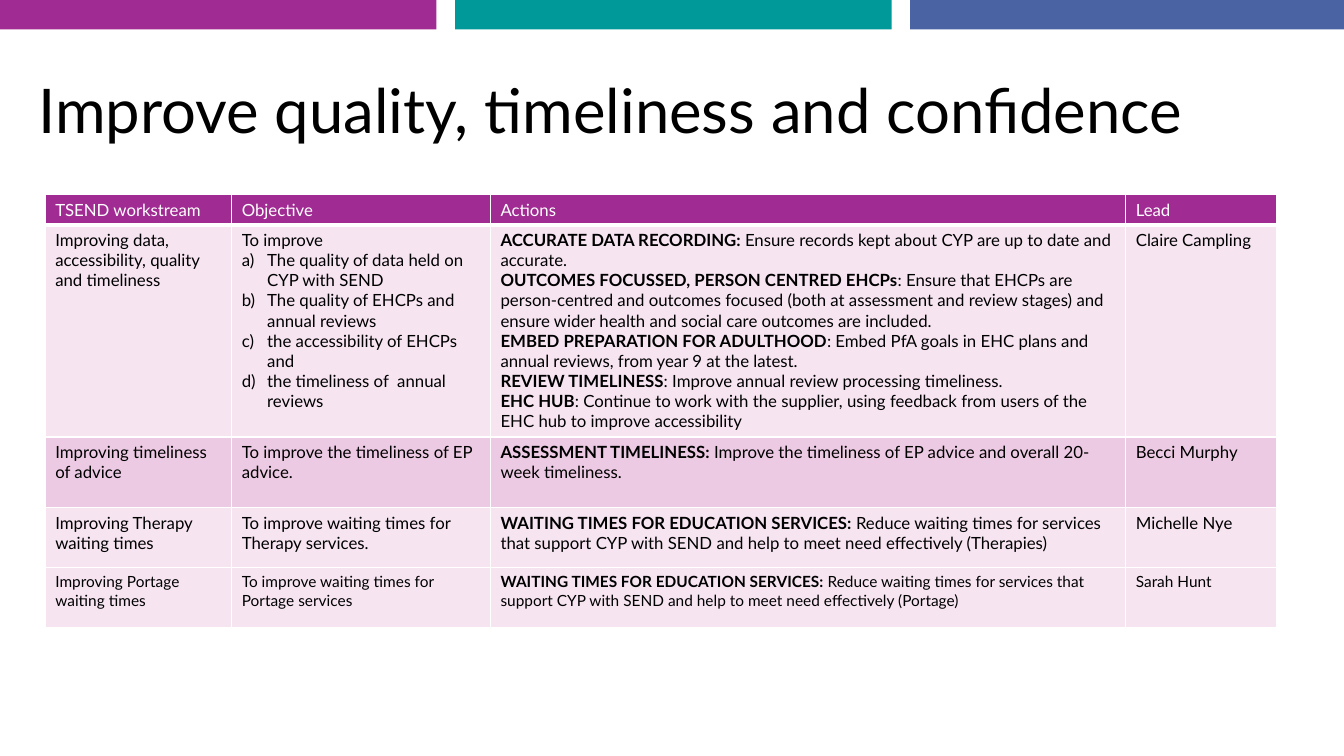
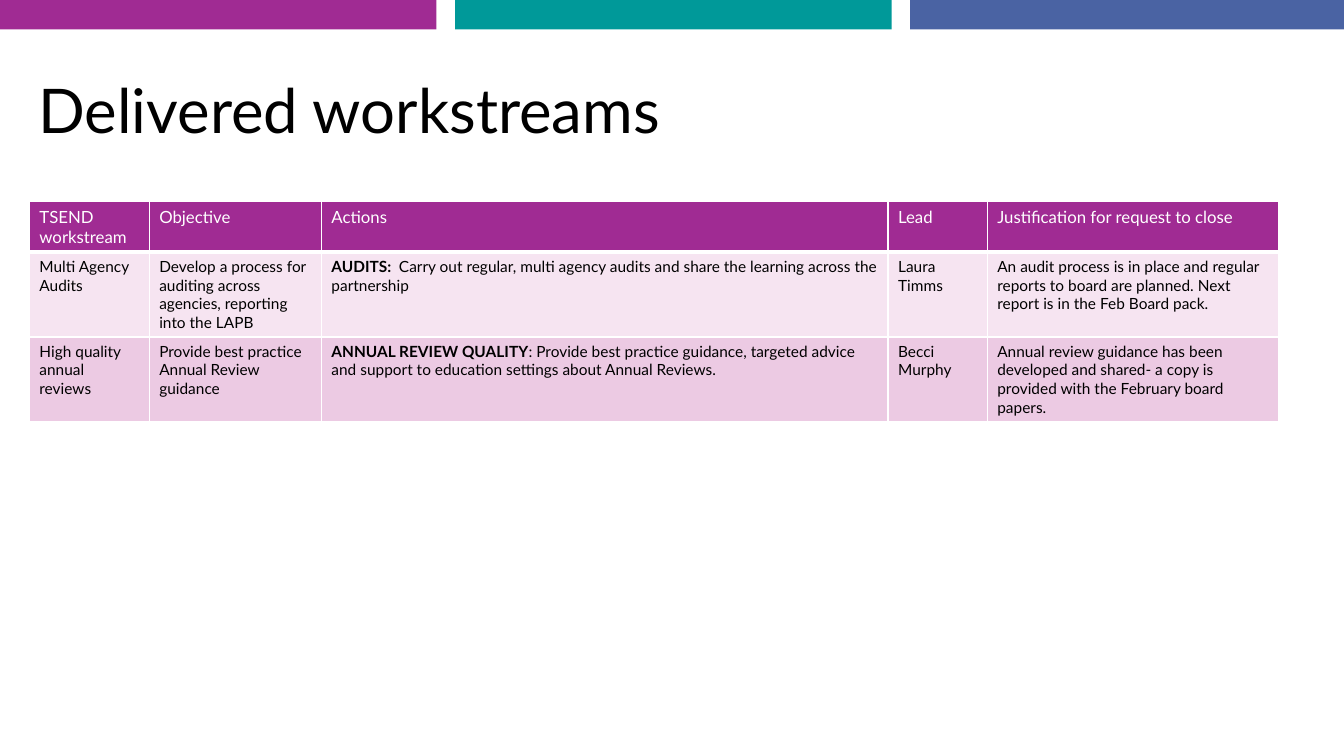
from dataclasses import dataclass

from lxml.etree import SubElement
from pptx import Presentation
from pptx.dml.color import RGBColor
from pptx.enum.shapes import MSO_SHAPE
from pptx.enum.text import MSO_ANCHOR, MSO_AUTO_SIZE, PP_ALIGN
from pptx.oxml.ns import qn
from pptx.util import Cm, Pt


@dataclass(frozen=True)
class Theme:
    font: str = "Lato"
    purple: str = "A02B93"
    teal: str = "009999"
    blue: str = "4A63A3"
    pale: str = "F6E4F1"
    tint: str = "ECCAE3"
    ink: str = "000000"
    white: str = "FFFFFF"
    title_size: int = 44
    table_size: int = 12
    small_size: int = 11
    border: int = 1
    header_border: int = 3


@dataclass(frozen=True)
class Line:
    """One paragraph: an optional bold lead, then plain text."""
    text: str
    lead: str = ""
    lettered: bool = False


THEME = Theme()
SLIDE_SIZE = (33.87, 19.05)
TITLE_BOX = (0.71, 1.02, 32.44, 3.68)
BAND_WIDTH, BAND_HEIGHT, BAND_STEP = 11, 0.74, 11.47
BAND_COLOURS = (THEME.purple, THEME.teal, THEME.blue)
LIST_INDENT = 0.64

SLIDES = [
    {
        "title": "Improve quality, timeliness and confidence",
        "corner": (1.14, 4.9),
        "columns": (4.7, 6.52, 16.01, 3.81),
        "heights": (0.74, 5.35, 1.78, 1.51, 1.51),
        "sizes": (THEME.table_size,) * 4 + (THEME.small_size,),
        "rows": [
            ["TSEND workstream", "Objective", "Actions", "Lead"],
            [
                "Improving data, accessibility, quality and timeliness",
                [
                    Line("To improve"),
                    Line("The quality of data held on CYP with SEND", lettered=True),
                    Line("The quality of EHCPs and annual reviews", lettered=True),
                    Line("the accessibility of EHCPs and", lettered=True),
                    Line("the timeliness of  annual reviews", lettered=True),
                ],
                [
                    Line("Ensure records kept about CYP are up to date and accurate.",
                         "ACCURATE DATA RECORDING: "),
                    Line(": Ensure that EHCPs are person-centred and outcomes focused "
                         "(both at assessment and review stages) and ensure wider health "
                         "and social care outcomes are included.",
                         "OUTCOMES FOCUSSED, PERSON CENTRED EHCPs"),
                    Line(": Embed PfA goals in EHC plans and annual reviews, "
                         "from year 9 at the latest.",
                         "EMBED PREPARATION FOR ADULTHOOD"),
                    Line(": Improve annual review processing timeliness.",
                         "REVIEW TIMELINESS"),
                    Line(": Continue to work with the supplier, using feedback from "
                         "users of the EHC hub to improve accessibility",
                         "EHC HUB"),
                ],
                "Claire Campling",
            ],
            [
                "Improving timeliness of advice",
                "To improve the timeliness of EP advice.",
                [Line("Improve the timeliness of EP advice and overall 20- week timeliness.",
                      "ASSESSMENT TIMELINESS: ")],
                "Becci Murphy",
            ],
            [
                "Improving Therapy waiting times",
                "To improve waiting times for Therapy services.",
                [Line("Reduce waiting times for services that support CYP with SEND "
                      "and help to meet need effectively (Therapies)",
                      "WAITING TIMES FOR EDUCATION SERVICES: ")],
                "Michelle Nye",
            ],
            [
                "Improving Portage waiting times",
                "To improve waiting times for Portage services",
                [Line("Reduce waiting times for services that support CYP with SEND "
                      "and help to meet need effectively (Portage)",
                      "WAITING TIMES FOR EDUCATION SERVICES: ")],
                "Sarah Hunt",
            ],
        ],
        "fills": (THEME.purple, THEME.pale, THEME.tint, THEME.pale, THEME.pale),
    },
    {
        "title": "Delivered workstreams",
        "corner": (0.74, 5.08),
        "columns": (3.02, 4.34, 14.28, 2.5, 7.33),
        "heights": (1.23, 2.14, 2.14),
        "sizes": (THEME.table_size, THEME.small_size, THEME.small_size),
        "rows": [
            ["TSEND workstream", "Objective", "Actions", "Lead",
             "Justification for request to close"],
            [
                "Multi Agency Audits",
                "Develop a process for auditing across agencies, reporting into the LAPB",
                [Line("Carry out regular, multi agency audits and share the learning "
                      "across the partnership", "AUDITS:  ")],
                "Laura Timms",
                "An audit process is in place and regular reports to board are planned. "
                "Next report is in the Feb Board pack.",
            ],
            [
                "High quality annual reviews",
                "Provide best practice Annual Review guidance",
                [Line(": Provide best practice guidance, targeted advice and support to "
                      "education settings about Annual Reviews.",
                      "ANNUAL REVIEW QUALITY")],
                "Becci Murphy",
                "Annual review guidance has been developed and shared- a copy is "
                "provided with the February board papers.",
            ],
        ],
        "fills": (THEME.purple, THEME.pale, THEME.tint),
    },
]


def add_letter(paragraph):
    """Number the paragraph a), b), c) with a hanging indent."""
    properties = paragraph._p.get_or_add_pPr()
    properties.set("marL", str(Cm(LIST_INDENT)))
    properties.set("indent", str(-Cm(LIST_INDENT)))
    SubElement(properties, qn("a:buAutoNum"), type="alphaLcParenR")


def write_text(frame, content, size, colour=THEME.ink, spacing=None):
    """Fill a text frame from a string or a list of Lines."""
    lines = [Line(content)] if isinstance(content, str) else content
    for index, line in enumerate(lines):
        paragraph = frame.add_paragraph() if index else frame.paragraphs[0]
        paragraph.alignment = PP_ALIGN.LEFT
        if spacing:
            paragraph.line_spacing = spacing
        if line.lettered:
            add_letter(paragraph)
        for text, bold in ((line.lead, True), (line.text, False)):
            if text:
                run = paragraph.add_run()
                run.text = text
                run.font.name = THEME.font
                run.font.size = Pt(size)
                run.font.bold = bold
                run.font.color.rgb = RGBColor.from_string(colour)


def set_borders(cell, bottom):
    properties = cell._tc.get_or_add_tcPr()
    widths = {"L": THEME.border, "R": THEME.border, "T": THEME.border, "B": bottom}
    for side, width in widths.items():
        border = SubElement(properties, qn(f"a:ln{side}"), w=str(Pt(width)))
        fill = SubElement(border, qn("a:solidFill"))
        SubElement(fill, qn("a:srgbClr"), val=THEME.white)


def fill_solid(item, colour):
    item.fill.solid()
    item.fill.fore_color.rgb = RGBColor.from_string(colour)


def add_workstream_table(slide, content):
    rows, columns, heights = content["rows"], content["columns"], content["heights"]
    left, top = content["corner"]
    table = slide.shapes.add_table(
        len(rows), len(columns), Cm(left), Cm(top), Cm(sum(columns)), Cm(sum(heights))
    ).table
    table.horz_banding = False
    for column, width in zip(table.columns, columns):
        column.width = Cm(width)
    for index, row in enumerate(table.rows):
        row.height = Cm(heights[index])
        is_header = index == 0
        for cell, text in zip(row.cells, rows[index]):
            set_borders(cell, THEME.header_border if is_header else THEME.border)
            fill_solid(cell, content["fills"][index])
            write_text(cell.text_frame, text, content["sizes"][index],
                       colour=THEME.white if is_header else THEME.ink)


def add_master_bands(master, slide):
    """Draw the top bands on a slide, then move them behind the master's placeholders."""
    for index, colour in enumerate(BAND_COLOURS):
        left = index * BAND_STEP
        width = min(BAND_WIDTH, SLIDE_SIZE[0] - left)
        band = slide.shapes.add_shape(
            MSO_SHAPE.RECTANGLE, Cm(left), 0, Cm(width), Cm(BAND_HEIGHT))
        band.shadow.inherit = False
        fill_solid(band, colour)
        band.line.fill.background()
        band.element.nvSpPr.cNvPr.set("id", str(100 + index))
        master.shapes.element.insert(2 + index, band.element)


def add_slide(presentation, layout, content):
    slide = presentation.slides.add_slide(layout)
    frame = slide.shapes.title.text_frame
    frame.auto_size = MSO_AUTO_SIZE.NONE
    frame.vertical_anchor = MSO_ANCHOR.MIDDLE
    write_text(frame, content["title"], THEME.title_size, spacing=0.9)
    add_workstream_table(slide, content)
    return slide


def main():
    presentation = Presentation()
    presentation.slide_width, presentation.slide_height = map(Cm, SLIDE_SIZE)
    layout = presentation.slide_layouts.get_by_name("Title Only")
    title = layout.placeholders[0]
    title.left, title.top, title.width, title.height = map(Cm, TITLE_BOX)
    slides = [add_slide(presentation, layout, content) for content in SLIDES]
    add_master_bands(presentation.slide_master, slides[0])
    presentation.save("out.pptx")


if __name__ == "__main__":
    main()
